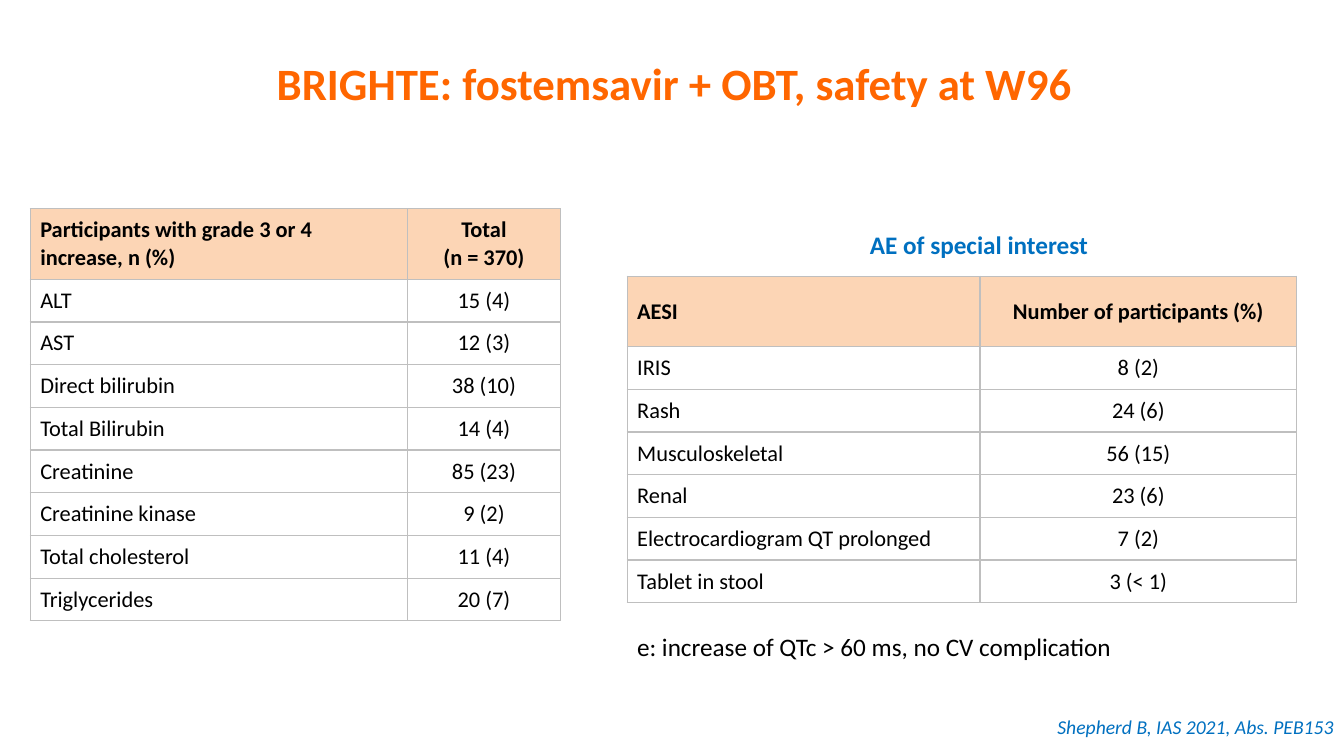
from dataclasses import dataclass

from lxml.etree import SubElement
from pptx import Presentation
from pptx.dml.color import RGBColor
from pptx.enum.text import MSO_ANCHOR, MSO_AUTO_SIZE, PP_ALIGN
from pptx.oxml.ns import qn
from pptx.util import Inches, Pt


@dataclass(frozen=True)
class Theme:
    font: str = "Calibri"
    orange: str = "FF6600"
    blue: str = "0070C0"
    black: str = "000000"
    white: str = "FFFFFF"
    header_fill: str = "FCD5B5"
    border: str = "BFBFBF"
    title_size: int = 32
    label_size: int = 18
    table_size: int = 16
    source_size: int = 14
    border_width: int = 1


THEME = Theme()
HEADER_HEIGHT = 0.7

LAB_ROWS = [
    ("Participants with grade 3 or 4\vincrease, n (%)", "Total\v(n = 370)"),
    ("ALT", "15 (4)"),
    ("AST", "12 (3)"),
    ("Direct bilirubin", "38 (10)"),
    ("Total Bilirubin", "14 (4)"),
    ("Creatinine", "85 (23)"),
    ("Creatinine kinase", "9 (2)"),
    ("Total cholesterol", "11 (4)"),
    ("Triglycerides", "20 (7)"),
]
AESI_ROWS = [
    ("AESI", "Number of participants (%)"),
    ("IRIS", "8 (2)"),
    ("Rash", "24 (6)"),
    ("Musculoskeletal", "56 (15)"),
    ("Renal", "23 (6)"),
    ("Electrocardiogram QT prolonged", "7 (2)"),
    ("Tablet in stool", "3 (< 1)"),
]


def write_text(text_frame, text, size, color, align=PP_ALIGN.LEFT, **font_format):
    text_frame.text = text
    paragraph = text_frame.paragraphs[0]
    paragraph.alignment = align
    values = {"name": THEME.font, "size": Pt(size), "bold": False, **font_format}
    for run in paragraph.runs:
        for name, value in values.items():
            setattr(run.font, name, value)
        run.font.color.rgb = RGBColor.from_string(color)


def set_title(slide, text):
    title = slide.shapes.title
    place = {"left": 2.06, "top": 0.01, "width": 9.26, "height": 1.62}
    for name, value in place.items():
        setattr(title, name, Inches(value))
    title.text_frame.vertical_anchor = MSO_ANCHOR.MIDDLE
    write_text(title.text_frame, text, THEME.title_size, THEME.orange,
               PP_ALIGN.CENTER, bold=True)


def add_label(slide, place, text, size, color, wrap=False, **text_format):
    box = slide.shapes.add_textbox(*map(Inches, place))
    box.text_frame.word_wrap = wrap
    box.text_frame.auto_size = MSO_AUTO_SIZE.SHAPE_TO_FIT_TEXT
    write_text(box.text_frame, text, size, color, **text_format)


def set_borders(cell):
    properties = cell._tc.get_or_add_tcPr()
    for side in ("a:lnL", "a:lnR", "a:lnT", "a:lnB"):
        line = SubElement(properties, qn(side), w=str(Pt(THEME.border_width)))
        fill = SubElement(line, qn("a:solidFill"))
        SubElement(fill, qn("a:srgbClr"), val=THEME.border)


def format_cell(cell, text, is_header, align):
    set_borders(cell)
    cell.fill.solid()
    fill = THEME.header_fill if is_header else THEME.white
    cell.fill.fore_color.rgb = RGBColor.from_string(fill)
    cell.vertical_anchor = MSO_ANCHOR.MIDDLE
    write_text(cell.text_frame, text, THEME.table_size, THEME.black, align,
               bold=is_header)


def add_count_table(slide, left, top, height, column_widths, rows):
    """Add a tall header row over equal rows of names and centred counts."""
    frame = slide.shapes.add_table(
        len(rows), len(column_widths), Inches(left), Inches(top),
        Inches(sum(column_widths)), Inches(height))
    table = frame.table
    table.first_row = table.horz_banding = False
    for column, width in zip(table.columns, column_widths):
        column.width = Inches(width)
    body_height = (height - HEADER_HEIGHT) / (len(rows) - 1)
    for row_index, texts in enumerate(rows):
        is_header = row_index == 0
        row = table.rows[row_index]
        row.height = Inches(HEADER_HEIGHT if is_header else body_height)
        for cell, text, align in zip(row.cells, texts,
                                     (PP_ALIGN.LEFT, PP_ALIGN.CENTER)):
            format_cell(cell, text, is_header, align)


def main():
    presentation = Presentation()
    presentation.slide_width = Inches(13.33)
    presentation.slide_height = Inches(7.5)
    slide = presentation.slides.add_slide(presentation.slide_layouts[5])

    set_title(slide, "BRIGHTE: fostemsavir + OBT, safety at W96")
    add_label(slide, (8.52, 2.23, 2.38, 0.4), "AE of special interest",
              THEME.label_size, THEME.blue, align=PP_ALIGN.CENTER, bold=True)
    add_label(slide, (6.22, 6.21, 5.02, 0.4),
              "e: increase of QTc > 60 ms, no CV complication",
              THEME.label_size, THEME.black)
    add_label(slide, (10.26, 7.04, 3.07, 0.34),
              "Shepherd B, IAS 2021, Abs. PEB153", THEME.source_size,
              THEME.blue, wrap=True, align=PP_ALIGN.RIGHT, italic=True)
    add_count_table(slide, 0.3, 2.07, 4.09, (3.74, 1.52), LAB_ROWS)
    add_count_table(slide, 6.22, 2.74, 3.24, (3.5, 3.14), AESI_ROWS)

    presentation.save("out.pptx")


if __name__ == "__main__":
    main()
